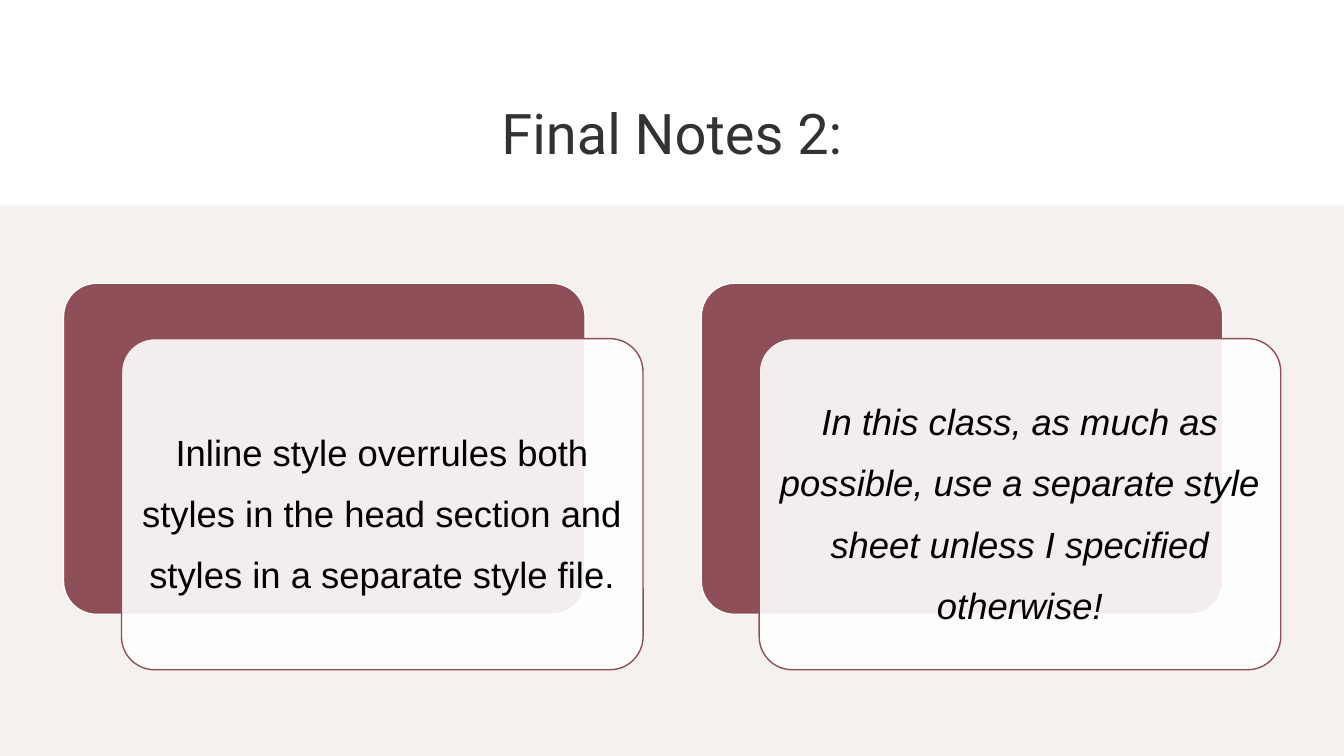
"""Build the "Final Notes 2" slide with two layered note cards."""
from dataclasses import dataclass, replace

from lxml import etree
from pptx import Presentation
from pptx.dml.color import RGBColor
from pptx.enum.shapes import MSO_SHAPE
from pptx.enum.text import MSO_ANCHOR, PP_ALIGN
from pptx.oxml.ns import qn
from pptx.slide import Slide
from pptx.util import Inches, Pt

RECTANGLE = MSO_SHAPE.RECTANGLE
ROUNDED = MSO_SHAPE.ROUNDED_RECTANGLE
MIDDLE = MSO_ANCHOR.MIDDLE
CENTER = PP_ALIGN.CENTER

SLIDE_WIDTH = Inches(13.33)
SLIDE_HEIGHT = Inches(7.5)
COLORS = {
    "white": "FFFFFF",
    "sand": "F4F1EF",
    "wine": "8F4F58",
    "heading": "323232",
    "body": "000000",
}


@dataclass(frozen=True)
class Area:
    """Position and size in percent of the slide's width and height."""

    left: float
    top: float
    width: float
    height: float

    def shifted(self, right: float, down: float) -> "Area":
        """Return the same area moved right and down."""
        return replace(self, left=self.left + right, top=self.top + down)

    def inset(self, across: float, along: float) -> "Area":
        """Return the area shrunk evenly on opposite sides."""
        return Area(self.left + across, self.top + along,
                    self.width - 2 * across, self.height - 2 * along)

    def box(self) -> tuple[int, int, int, int]:
        """Return the area in slide units."""
        return (round(self.left * SLIDE_WIDTH / 100),
                round(self.top * SLIDE_HEIGHT / 100),
                round(self.width * SLIDE_WIDTH / 100),
                round(self.height * SLIDE_HEIGHT / 100))


@dataclass(frozen=True)
class TextStyle:
    """Look of a centred block of text."""

    font: str
    size: int
    color: str
    italic: bool = False
    line_spacing: float = 1.0
    space_after: float = 0
    margins: tuple[float, float] = (0.1, 0.05)


@dataclass(frozen=True)
class Note:
    """Wording and style of one card."""

    wording: str
    style: TextStyle


PAGE = Area(0, 0, 100, 100)
LOWER_BAND = Area(0, 27.2, 100, 72.8)
TITLE_AREA = Area(11.66, 10.27, 76.67, 14.53)
FIRST_CARD = Area(4.73, 37.47, 38.81, 43.8)
CARD_PITCH = 47.45
FRONT_OFFSET = (4.31, 7.33)
TEXT_INSET = (0.72, 1.27)

TITLE_STYLE = TextStyle("Roboto", 40, "heading")
NOTE_STYLE = TextStyle("Arial", 26, "body", line_spacing=1.4,
                       space_after=9.1, margins=(0.09, 0.11))
NOTES = (
    Note("Inline style overrules both styles in the head section and "
         "styles in a separate style file.", NOTE_STYLE),
    Note("In this class, as much as possible, use a separate style sheet "
         "unless I specified otherwise!", replace(NOTE_STYLE, italic=True)),
)


def rgb(color: str) -> RGBColor:
    """Look up a palette colour."""
    return RGBColor.from_string(COLORS[color])


def add_panel(slide: Slide, area: Area, fill: str, outline: str | None = None,
              opacity: int = 100) -> None:
    """Draw a plain band, or a rounded panel if an outline is given."""
    panel = slide.shapes.add_shape(ROUNDED if outline else RECTANGLE, *area.box())
    panel.shadow.inherit = False
    panel.fill.solid()
    panel.fill.fore_color.rgb = rgb(fill)
    if outline:
        panel.adjustments[0] = 0.1
        panel.line.color.rgb = rgb(outline)
        panel.line.width = Pt(1)
    else:
        panel.line.fill.background()
    if opacity < 100:
        properties = panel.element.spPr
        tint = properties.find(qn("a:solidFill"))[0]
        etree.SubElement(tint, qn("a:alpha")).set("val", str(opacity * 1000))


def add_words(slide: Slide, area: Area, wording: str, style: TextStyle) -> None:
    """Place a centred block of text."""
    frame = slide.shapes.add_textbox(*area.box()).text_frame
    frame.word_wrap = True
    frame.vertical_anchor = MIDDLE
    across, along = style.margins
    frame.margin_left = frame.margin_right = Inches(across)
    frame.margin_top = frame.margin_bottom = Inches(along)
    frame.text = wording
    paragraph = frame.paragraphs[0]
    paragraph.alignment = CENTER
    paragraph.line_spacing = style.line_spacing
    paragraph.space_after = Pt(style.space_after)
    font = paragraph.runs[0].font
    font.name = style.font
    font.size = Pt(style.size)
    font.italic = style.italic
    font.color.rgb = rgb(style.color)


def add_note(slide: Slide, note: Note, column: int) -> None:
    """Draw one card: back panel, translucent front panel and wording."""
    back = FIRST_CARD.shifted(column * CARD_PITCH, 0)
    front = back.shifted(*FRONT_OFFSET)
    add_panel(slide, back, "wine", "white")
    add_panel(slide, front, "white", "wine", opacity=90)
    add_words(slide, front.inset(*TEXT_INSET), note.wording, note.style)


def main() -> None:
    """Assemble and save the slide."""
    deck = Presentation()
    deck.slide_width = SLIDE_WIDTH
    deck.slide_height = SLIDE_HEIGHT
    slide = deck.slides.add_slide(deck.slide_layouts[6])
    add_panel(slide, PAGE, "white")
    add_words(slide, TITLE_AREA, "Final Notes 2:", TITLE_STYLE)
    add_panel(slide, LOWER_BAND, "sand")
    for column, note in enumerate(NOTES):
        add_note(slide, note, column)
    deck.save("out.pptx")


if __name__ == "__main__":
    main()
